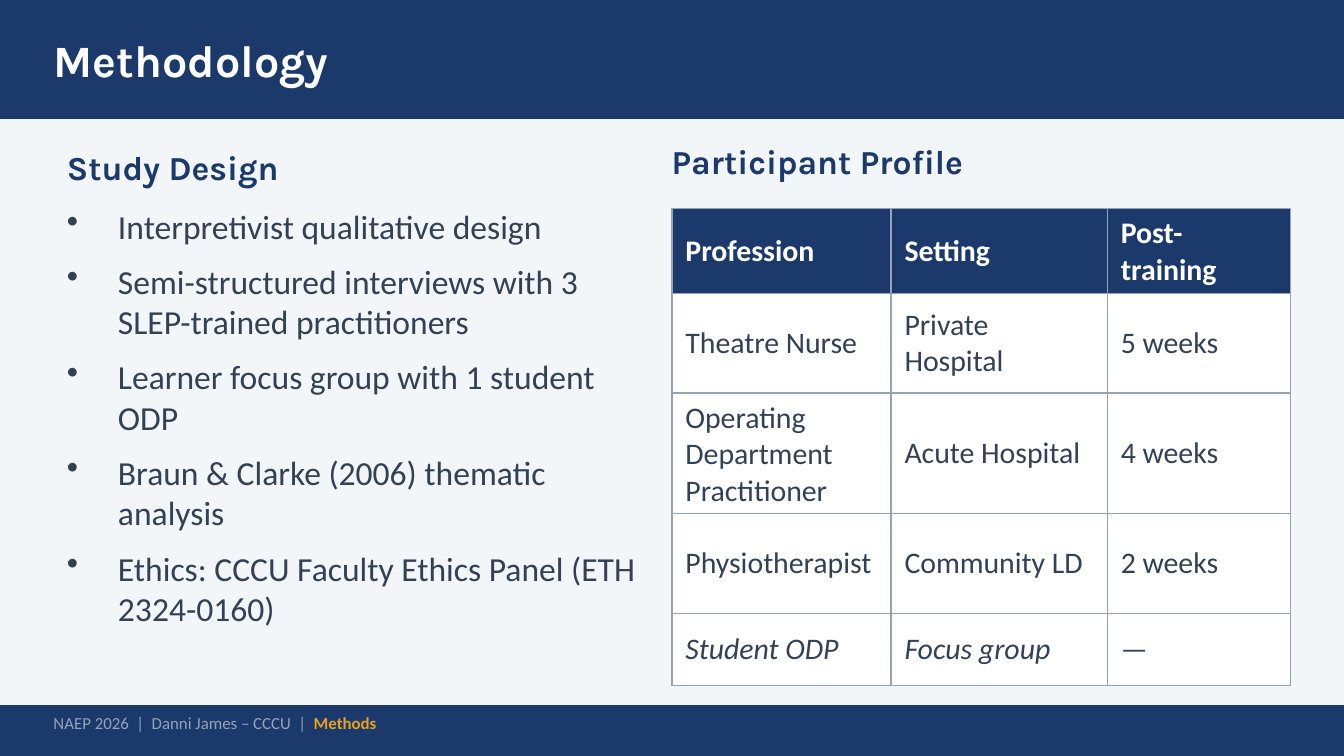
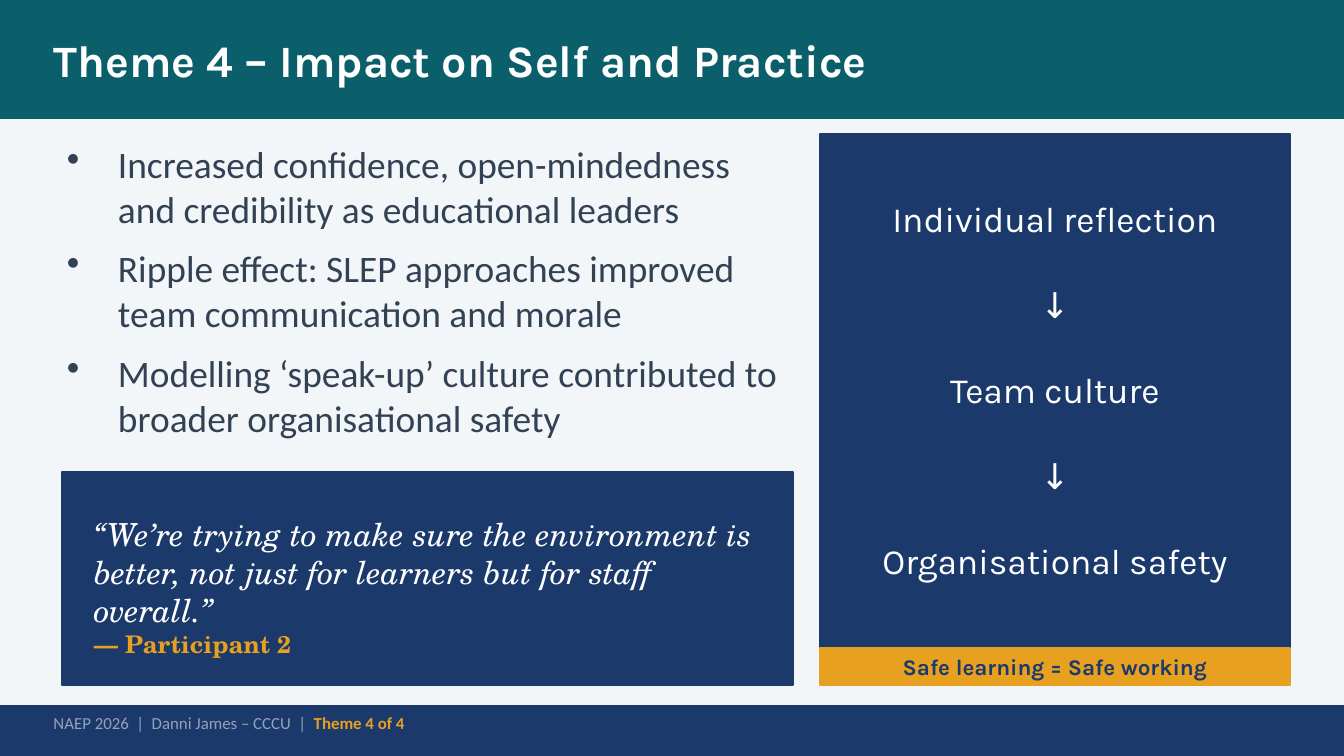
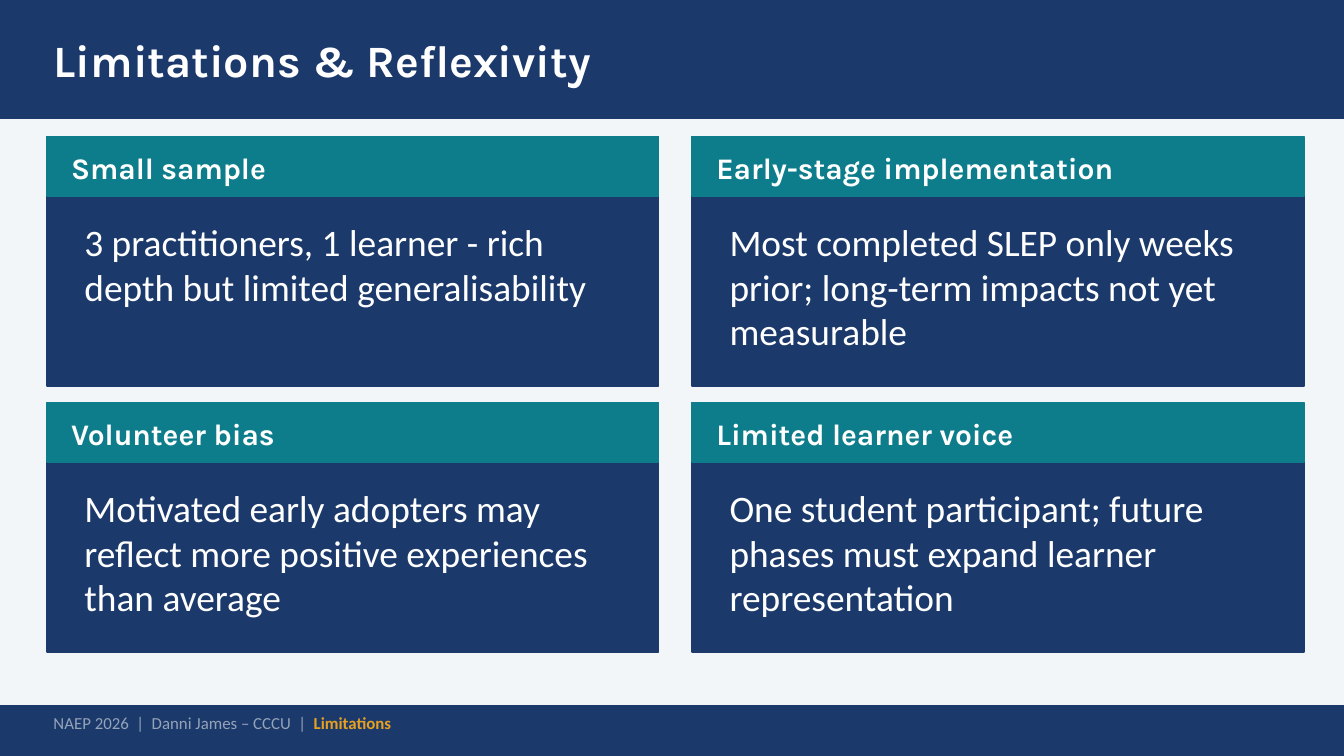
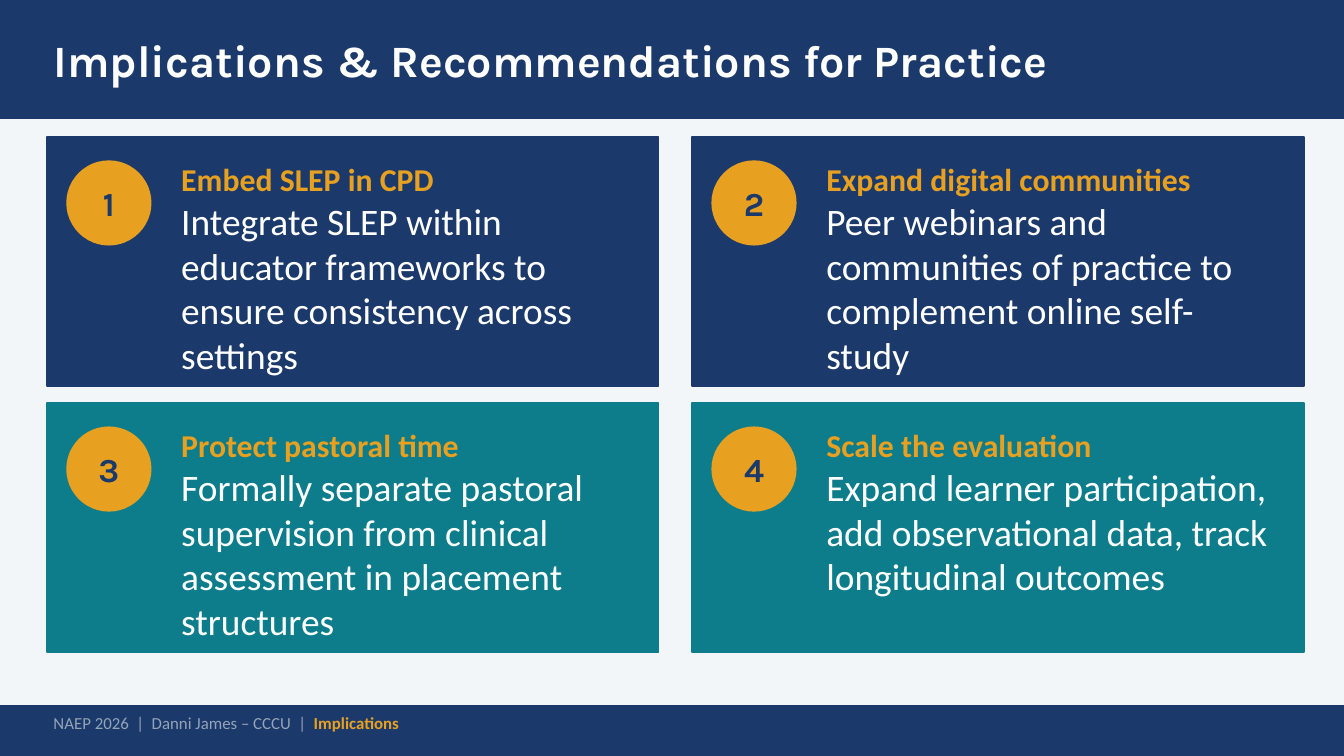
from dataclasses import dataclass, replace

from lxml import etree
from pptx import Presentation
from pptx import util as u
from pptx.dml.color import RGBColor
from pptx.enum import shapes, text
from pptx.oxml import ns


@dataclass(frozen=True)
class Style:
    size: int
    font: str
    color: str
    bold: bool = False
    italic: bool = False


@dataclass(frozen=True)
class Theme:
    paper: str = "F2F6F8"
    navy: str = "1B3A6B"
    deep_teal: str = "0A5F6B"
    teal: str = "0D7D8C"
    amber: str = "E8A020"
    grey: str = "94A3B8"
    slate: str = "334155"
    white: str = "FFFFFF"
    heading_font: str = "Karla"
    body_font: str = "Calibri"
    quote_font: str = "TeX Gyre Schola"

    def heading(self, size, color, bold=True):
        return Style(size, self.heading_font, color, bold)

    def body(self, size, color, bold=False):
        return Style(size, self.body_font, color, bold)

    @property
    def title(self):
        return self.heading(24, self.white)

    @property
    def section(self):
        return self.heading(18, self.navy)

    @property
    def card_heading(self):
        return self.heading(16, self.white)

    @property
    def card_body(self):
        return self.body(20, self.white)

    @property
    def card_lead(self):
        return self.body(17, self.amber, True)

    @property
    def number(self):
        return self.heading(18, self.navy)

    @property
    def chain(self):
        return self.heading(19, self.white, False)

    @property
    def motto(self):
        return self.heading(12, self.navy)

    @property
    def footer(self):
        return self.body(9, self.grey)

    @property
    def footer_topic(self):
        return self.body(9, self.amber, True)

    @property
    def cell(self):
        return self.body(16, self.slate)

    @property
    def header_cell(self):
        return self.body(16, self.white, True)

    @property
    def quote(self):
        return Style(17, self.quote_font, self.white, italic=True)

    @property
    def speaker(self):
        return Style(13, self.quote_font, self.amber, bold=True)


THEME = Theme()
WIDTH = 10
HEIGHT = WIDTH * 9 / 16
CARD_SIZE = (4.55, 1.85)
CARD_PITCH = (4.8, 1.98)
CARD_ORIGIN = (0.35, 1.02)
MIDDLE = text.MSO_ANCHOR.MIDDLE
CENTER = text.PP_ALIGN.CENTER


def inches(*lengths):
    return [u.Inches(length) for length in lengths]


def add_block(page, place, color, kind=shapes.MSO_SHAPE.RECTANGLE):
    block = page.shapes.add_shape(kind, *inches(*place))
    block.shadow.inherit = False
    block.fill.solid()
    block.fill.fore_color.rgb = RGBColor.from_string(color)
    block.line.color.rgb = RGBColor.from_string(color)
    block.line.width = u.Pt(1)


def format_span(span, style):
    font = span.font
    font.size = u.Pt(style.size)
    font.name = style.font
    font.bold = style.bold
    font.italic = style.italic
    font.color.rgb = RGBColor.from_string(style.color)


def add_text(page, place, paragraphs, anchor=text.MSO_ANCHOR.TOP, align=None, inset=True, gap=0):
    box = page.shapes.add_textbox(*inches(*place))
    frame = box.text_frame
    frame.word_wrap = True
    frame.vertical_anchor = anchor
    if not inset:
        frame.margin_left = frame.margin_right = frame.margin_top = frame.margin_bottom = 0
    for index, spans in enumerate(paragraphs):
        para = frame.add_paragraph() if index else frame.paragraphs[0]
        para.alignment = align
        if index and gap:
            para.space_before = u.Pt(gap)
        for position, (words, style) in enumerate(spans):
            if position and spans[position - 1][0].endswith("\n"):
                para.add_line_break()
            span = para.add_run()
            span.text = words.rstrip("\n")
            format_span(span, style)
    return frame


def add_label(page, place, words, style, **options):
    return add_text(page, place, [[(words, style)]], anchor=MIDDLE, **options)


def add_bullets(page, place, items, style):
    frame = add_text(page, place, [[(item, style)] for item in items])
    for para in frame.paragraphs:
        para.space_after = u.Pt(8)
        properties = para._p.get_or_add_pPr()
        properties.set("marL", str(u.Inches(0.38)))
        properties.set("indent", str(-u.Inches(0.38)))
        etree.SubElement(properties, ns.qn("a:buChar"), char="•")


def set_borders(cell, color, width):
    properties = cell._tc.get_or_add_tcPr()
    for side in ("a:lnL", "a:lnR", "a:lnT", "a:lnB"):
        line = etree.SubElement(properties, ns.qn(side), w=str(u.Pt(width)))
        fill = etree.SubElement(line, ns.qn("a:solidFill"))
        etree.SubElement(fill, ns.qn("a:srgbClr"), val=color)


def add_grid(page, place, widths, heights, rows):
    frame = page.shapes.add_table(len(rows), len(widths), *inches(*place))
    table = frame.table
    table.horz_banding = False
    for column, width in zip(table.columns, widths):
        column.width = u.Inches(width)
    for line, height in zip(table.rows, heights):
        line.height = u.Inches(height)
    for row_index, row in enumerate(rows):
        is_header = row_index == 0
        style = THEME.header_cell if is_header else THEME.cell
        if row_index == len(rows) - 1:
            style = replace(style, italic=True)
        for column_index, words in enumerate(row):
            cell = table.cell(row_index, column_index)
            cell.text = words
            cell.vertical_anchor = MIDDLE
            format_span(cell.text_frame.paragraphs[0].runs[0], style)
            set_borders(cell, THEME.grey, 0.8)
            cell.fill.solid()
            cell.fill.fore_color.rgb = RGBColor.from_string(THEME.navy if is_header else THEME.white)


def add_page(deck, title, topic, band=THEME.navy):
    page = deck.slides.add_slide(deck.slide_layouts[6])
    page.background.fill.solid()
    page.background.fill.fore_color.rgb = RGBColor.from_string(THEME.paper)
    add_block(page, (0, 0, WIDTH, 0.88), band)
    add_label(page, (0.4, 0.05, 9.2, 0.78), title, THEME.title, inset=False)
    add_block(page, (0, 5.25, WIDTH, 0.38), THEME.navy)
    footer = [("NAEP 2026  |  Danni James – CCCU  |  ", THEME.footer), (topic, THEME.footer_topic)]
    add_text(page, (0.3, 5.27, 9.4, 0.22), [footer], anchor=MIDDLE)
    return page


def card_corner(index):
    row, column = divmod(index, 2)
    return CARD_ORIGIN[0] + column * CARD_PITCH[0], CARD_ORIGIN[1] + row * CARD_PITCH[1]


def add_limitation(page, index, heading, body):
    left, top = card_corner(index)
    add_block(page, (left, top, *CARD_SIZE), THEME.navy)
    add_block(page, (left, top, CARD_SIZE[0], 0.44), THEME.teal)
    add_label(page, (left + 0.18, top + 0.06, 4.2, 0.34), heading, THEME.card_heading, inset=False)
    add_text(page, (left + 0.18, top + 0.56, 4.2, 1.2), [[(body, THEME.card_body)]])


def add_recommendation(page, index, lead, body):
    left, top = card_corner(index)
    add_block(page, (left, top, *CARD_SIZE), THEME.navy if index < 2 else THEME.teal)
    add_block(page, (left + 0.15, top + 0.18, 0.62, 0.62), THEME.amber, shapes.MSO_SHAPE.OVAL)
    add_label(page, (left + 0.15, top + 0.2, 0.62, 0.58), str(index + 1), THEME.number,
              align=CENTER, inset=False)
    add_text(page, (left + 0.9, top + 0.12, 3.5, 1.6),
             [[(lead + "\n", THEME.card_lead), (body, THEME.card_body)]])


def build_methodology(deck):
    page = add_page(deck, "Methodology", "Methods")
    add_label(page, (0.4, 1.05, 4.5, 0.38), "Study Design", THEME.section)
    add_bullets(page, (0.4, 1.48, 4.5, 3.65), [
        "Interpretivist qualitative design",
        "Semi-structured interviews with 3 SLEP-trained practitioners",
        "Learner focus group with 1 student ODP",
        "Braun & Clarke (2006) thematic analysis",
        "Ethics: CCCU Faculty Ethics Panel (ETH 2324-0160)",
    ], THEME.body(18, THEME.slate))
    add_label(page, (4.9, 1.01, 4.4, 0.38), "Participant Profile", THEME.section)
    add_grid(page, (5, 1.55, 4.6, 3.55), (1.63, 1.61, 1.36), (0.62, 0.74, 0.54, 0.74, 0.54), [
        ("Profession", "Setting", "Post-training"),
        ("Theatre Nurse", "Private Hospital", "5 weeks"),
        ("Operating Department Practitioner", "Acute Hospital", "4 weeks"),
        ("Physiotherapist", "Community LD", "2 weeks"),
        ("Student ODP", "Focus group", "—"),
    ])


def build_impact(deck):
    page = add_page(deck, "Theme 4 – Impact on Self and Practice", "Theme 4 of 4", THEME.deep_teal)
    add_bullets(page, (0.4, 1, 5.5, 2.35), [
        "Increased confidence, open-mindedness and credibility as educational leaders",
        "Ripple effect: SLEP approaches improved team communication and morale",
        "Modelling ‘speak-up’ culture contributed to broader organisational safety",
    ], THEME.body(20, THEME.slate))
    add_block(page, (0.46, 3.51, 5.44, 1.59), THEME.navy)
    add_text(page, (0.6, 3.78, 5.1, 1.27), [
        [("“We’re trying to make sure the environment is better, "
          "not just for learners but for staff overall.”", THEME.quote)],
        [("— Participant 2", THEME.speaker)],
    ])
    add_block(page, (6.1, 1, 3.5, 3.82), THEME.navy)
    steps = ["Individual reflection", "↓", "Team culture", "↓", "Organisational safety"]
    add_text(page, (6.1, 1.1, 3.5, 3.6), [[(step, THEME.chain)] for step in steps],
             anchor=MIDDLE, align=CENTER, gap=23)
    add_block(page, (6.1, 4.82, 3.5, 0.28), THEME.amber)
    add_label(page, (6.1, 4.83, 3.5, 0.26), "Safe learning = Safe working", THEME.motto,
              align=CENTER, inset=False)


def build_limitations(deck):
    page = add_page(deck, "Limitations & Reflexivity", "Limitations")
    limitations = [
        ("Small sample", "3 practitioners, 1 learner - rich depth but limited generalisability"),
        ("Early-stage implementation",
         "Most completed SLEP only weeks prior; long-term impacts not yet measurable"),
        ("Volunteer bias",
         "Motivated early adopters may reflect more positive experiences than average"),
        ("Limited learner voice",
         "One student participant; future phases must expand learner representation"),
    ]
    for index, (heading, body) in enumerate(limitations):
        add_limitation(page, index, heading, body)


def build_implications(deck):
    page = add_page(deck, "Implications & Recommendations for Practice", "Implications")
    recommendations = [
        ("Embed SLEP in CPD",
         "Integrate SLEP within educator frameworks to ensure consistency across settings"),
        ("Expand digital communities",
         "Peer webinars and communities of practice to complement online self-study"),
        ("Protect pastoral time",
         "Formally separate pastoral supervision from clinical assessment in placement structures"),
        ("Scale the evaluation",
         "Expand learner participation, add observational data, track longitudinal outcomes"),
    ]
    for index, (lead, body) in enumerate(recommendations):
        add_recommendation(page, index, lead, body)


def main():
    deck = Presentation()
    deck.slide_width, deck.slide_height = inches(WIDTH, HEIGHT)
    build_methodology(deck)
    build_impact(deck)
    build_limitations(deck)
    build_implications(deck)
    deck.save("out.pptx")


if __name__ == "__main__":
    main()
